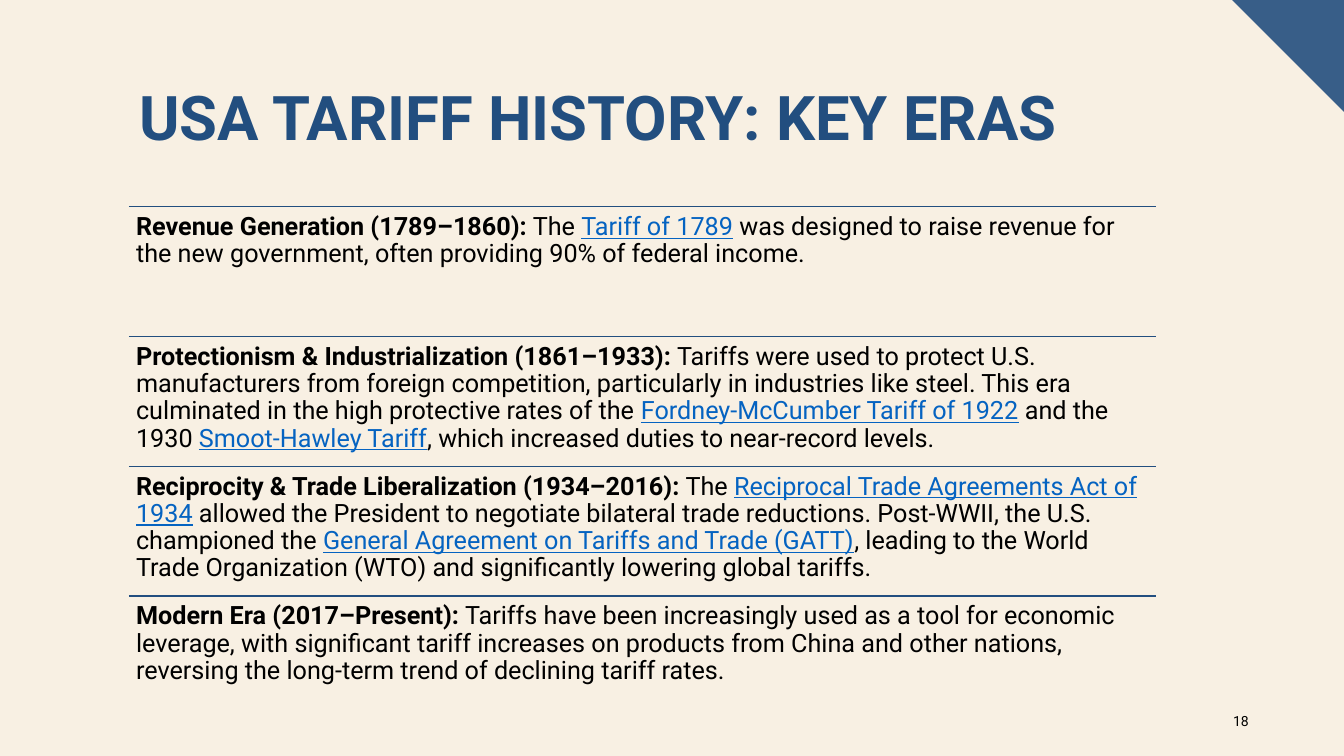
from dataclasses import dataclass

from lxml.etree import SubElement
from pptx import Presentation
from pptx.dml.color import RGBColor
from pptx.enum.shapes import MSO_CONNECTOR
from pptx.enum.text import MSO_ANCHOR as Anchor, PP_ALIGN as Align
from pptx.oxml.ns import qn
from pptx.slide import Slide
from pptx.text.text import TextFrame, _Paragraph as Paragraph
from pptx.util import Cm, Pt

FONT = "Roboto"
CREAM, NAVY, CORNER = "F8F0E3", "224E7F", "385E88"
BLACK, LINK = "000000", "0563C1"

SLIDE_W, SLIDE_H = 33.87, 19.05
LEFT, WIDTH = 3.25, 25.88
FIRST_TOP, ROW_H = 5.21, 3.27
CORNER_SIZE = 2.82


@dataclass
class Era:
    """One row: a bold heading, then plain and linked passages in turn."""
    heading: str
    passages: list[str]


ERAS = [
    Era("Revenue Generation (1789–1860):", [
        " The ",
        "Tariff of 1789",
        " was designed to raise revenue for the new government, "
        "often providing 90% of federal income.",
    ]),
    Era("Protectionism & Industrialization (1861–1933):", [
        " Tariffs were used to protect U.S. manufacturers from foreign "
        "competition, particularly in industries like steel. This era "
        "culminated in the high protective rates of the ",
        "Fordney-McCumber Tariff of 1922",
        " and the 1930 ",
        "Smoot-Hawley Tariff",
        ", which increased duties to near-record levels.",
    ]),
    Era("Reciprocity & Trade Liberalization (1934–2016):", [
        " The ",
        "Reciprocal Trade Agreements Act of 1934",
        " allowed the President to negotiate bilateral trade reductions. "
        "Post-WWII, the U.S. championed the ",
        "General Agreement on Tariffs and Trade (GATT)",
        ", leading to the World Trade Organization (WTO) and "
        "significantly lowering global tariffs.",
    ]),
    Era("Modern Era (2017–Present):", [
        " Tariffs have been increasingly used as a tool for economic "
        "leverage, with significant tariff increases on products from China "
        "and other nations, reversing the long-term trend of declining "
        "tariff rates.",
    ]),
]


def rgb(color: str) -> RGBColor:
    return RGBColor.from_string(color)


def add_run(p: Paragraph, text: str, *, size: float = 18, color: str = BLACK,
            bold: bool = False, underline: bool = False) -> None:
    r = p.add_run()
    r.text = text
    r.font.name = FONT
    r.font.size = Pt(size)
    r.font.bold = bold
    r.font.underline = underline
    r.font.color.rgb = rgb(color)


def add_box(s: Slide, left: float, top: float, width: float,
            height: float) -> TextFrame:
    tf = s.shapes.add_textbox(Cm(left), Cm(top), Cm(width), Cm(height)).text_frame
    tf.word_wrap = True
    return tf


def add_corner(s: Slide) -> None:
    inner = SLIDE_W - CORNER_SIZE
    builder = s.shapes.build_freeform(Cm(inner), Cm(0))
    builder.add_line_segments([(Cm(SLIDE_W), Cm(0)),
                               (Cm(SLIDE_W), Cm(CORNER_SIZE))])
    sp = builder.convert_to_shape()
    sp.shadow.inherit = False
    sp.fill.solid()
    sp.fill.fore_color.rgb = rgb(CORNER)
    sp.line.fill.background()


def add_title(s: Slide, text: str) -> None:
    sp = s.shapes.title
    sp.left, sp.top, sp.width, sp.height = Cm(LEFT), Cm(1.96), Cm(29.21), Cm(2.16)
    tf = sp.text_frame
    tf.vertical_anchor = Anchor.MIDDLE
    p = tf.paragraphs[0]
    p.alignment = Align.LEFT
    p.line_spacing = 0.9
    add_run(p, text, size=44, color=NAVY, bold=True)


def add_rule(s: Slide, top: float) -> None:
    rule = s.shapes.add_connector(MSO_CONNECTOR.STRAIGHT, Cm(LEFT), Cm(top),
                                  Cm(LEFT + WIDTH), Cm(top))
    rule.line.color.rgb = rgb(NAVY)
    rule.line.width = Pt(1)
    SubElement(rule._element.spPr, qn("a:effectLst"))


def add_era(s: Slide, era: Era, top: float) -> None:
    add_rule(s, top)
    tf = add_box(s, LEFT, top, WIDTH, ROW_H)
    tf.margin_left = tf.margin_right = tf.margin_top = tf.margin_bottom = Cm(0.18)
    p = tf.paragraphs[0]
    p.line_spacing = 0.9
    add_run(p, era.heading, bold=True)
    for i, passage in enumerate(era.passages):
        linked = i % 2 == 1
        add_run(p, passage, color=LINK if linked else BLACK, underline=linked)


def add_page_number(s: Slide, number: str) -> None:
    tf = add_box(s, 30.45, 17.65, 1.27, 1.02)
    tf.vertical_anchor = Anchor.MIDDLE
    p = tf.paragraphs[0]
    p.alignment = Align.RIGHT
    p.space_after = Pt(6)
    add_run(p, number, size=10)


def main() -> None:
    prs = Presentation()
    prs.slide_width, prs.slide_height = Cm(SLIDE_W), Cm(SLIDE_H)
    s = prs.slides.add_slide(prs.slide_layouts.get_by_name("Title Only"))
    s.background.fill.solid()
    s.background.fill.fore_color.rgb = rgb(CREAM)

    add_corner(s)
    add_title(s, "USA TARIFF HISTORY: KEY ERAS")
    add_page_number(s, "18")
    for i, era in enumerate(ERAS):
        add_era(s, era, FIRST_TOP + i * ROW_H)
    prs.save("out.pptx")


if __name__ == "__main__":
    main()
